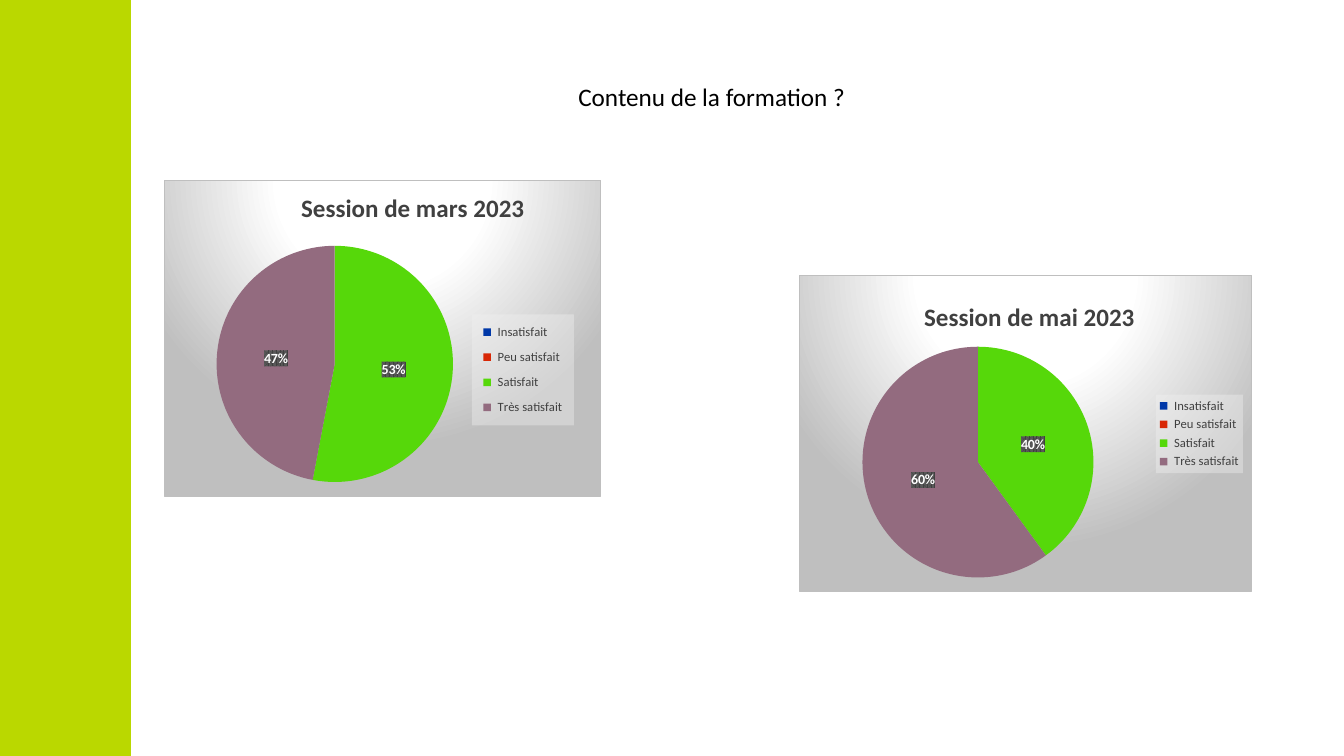
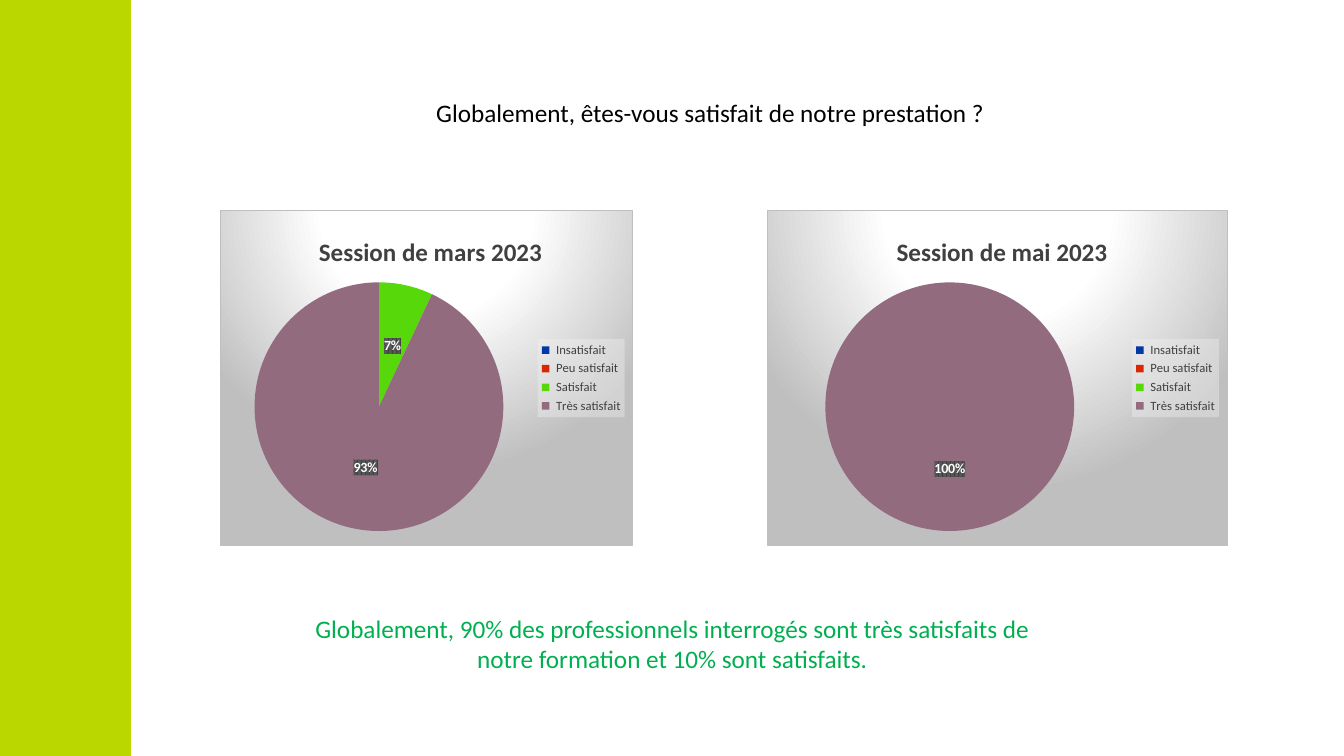
"""Build two survey slides, each comparing the pie charts of two training sessions."""
import dataclasses

import pptx
import pptx.chart.data
import pptx.dml.color
import pptx.enum.chart
import pptx.enum.shapes
import pptx.enum.text
import pptx.oxml
import pptx.oxml.ns
import pptx.util

Pt = pptx.util.Pt
RGB = pptx.dml.color.RGBColor.from_string
ALIGN = pptx.enum.text.PP_ALIGN
NS = pptx.oxml.ns.nsdecls("a", "c")
qn = pptx.oxml.ns.qn


@dataclasses.dataclass(frozen=True)
class Theme:
    """Colours, font and type sizes shared by the slides."""
    font: str = "Calibri"
    band: str = "BAD800"
    ink: str = "000000"
    white: str = "FFFFFF"
    grey: str = "404040"
    light_grey: str = "595959"
    edge: str = "BFBFBF"
    legend: str = "F2F2F2"
    conclusion: str = "00B050"
    slices: tuple = ("0038A8", "D82705", "56D80A", "936B7F")
    text_size: int = 18
    label_size: int = 10
    legend_size: int = 9


@dataclasses.dataclass(frozen=True)
class Pie:
    """One session's results; inner boxes are in points from the chart's corner."""
    title: str
    values: tuple
    box: tuple
    title_at: tuple
    circle: tuple
    legend_box: tuple = ()


T = Theme()
ANSWERS = (" Insatisfait", " Peu satisfait", " Satisfait", " Très satisfait")
MARCH, MAY = "Session de mars 2023", "Session de mai 2023"


def style_font(font, size, color, bold=False):
    """Apply the shared typeface with a size, colour and weight."""
    font.name, font.size, font.bold = T.font, Pt(size), bold
    font.color.rgb = RGB(color)


def add_band(s):
    """Draw the green band on the left edge."""
    sp = s.shapes.add_shape(pptx.enum.shapes.MSO_SHAPE.RECTANGLE, 0, 0, Pt(93.6), Pt(540))
    sp.shadow.inherit = False
    sp.fill.solid()
    sp.fill.fore_color.rgb = RGB(T.band)
    sp.line.fill.background()


def add_text(s, text, box, color=T.ink, align=ALIGN.LEFT):
    """Add a one-paragraph text box."""
    tf = s.shapes.add_textbox(*map(Pt, box)).text_frame
    tf.word_wrap = True
    p = tf.paragraphs[0]
    p.alignment = align
    r = p.add_run()
    r.text = text
    style_font(r.font, T.text_size, color)


def shape_props(inner):
    """Make a chart spPr element around fill and line XML."""
    return pptx.oxml.parse_xml(f"<c:spPr {NS}>{inner}</c:spPr>")


def solid(color, alpha=100):
    """Return solid fill XML with an opacity in percent."""
    return (f'<a:solidFill><a:srgbClr val="{color}"><a:alpha val="{alpha * 1000}"/>'
            "</a:srgbClr></a:solidFill>")


def set_layout(parent, pie, box, target=""):
    """Place a chart part at a box given in points from the chart's corner."""
    for old in parent.findall(qn("c:layout")):
        parent.remove(old)
    width, height = pie.box[2:]
    keys = ("x", "y", "w", "h")[:len(box)]
    parts = "".join(f'<c:{k}Mode val="edge"/>' for k in keys[:2])
    parts += "".join(f'<c:{k} val="{v / full:.4f}"/>'
                     for k, v, full in zip(keys, box, (width, height) * 2))
    layout = pptx.oxml.parse_xml(
        f"<c:layout {NS}><c:manualLayout>{target}{parts}</c:manualLayout></c:layout>")
    overlay = parent.find(qn("c:overlay"))
    (parent[0] if overlay is None else overlay).addprevious(layout)


def add_backdrop(chart):
    """Give the chart its radial grey background and thin border."""
    stops = "".join(f'<a:gs pos="{pos * 1000}"><a:srgbClr val="{color}"/></a:gs>'
                    for pos, color in ((0, T.white), (39, T.white), (100, T.edge)))
    frame = shape_props(
        f'<a:gradFill><a:gsLst>{stops}</a:gsLst><a:path path="circle">'
        '<a:fillToRect l="50000" t="-80000" r="50000" b="180000"/></a:path></a:gradFill>'
        f'<a:ln w="{Pt(0.75)}">{solid(T.edge)}</a:ln>')
    chart.element.find(qn("c:chart")).addnext(frame)


def add_title(chart, pie):
    """Write and place the chart title."""
    chart.has_title = True
    r = chart.chart_title.text_frame.paragraphs[0].add_run()
    r.text = pie.title
    style_font(r.font, T.text_size, T.grey, True)
    set_layout(chart.chart_title.element if hasattr(chart.chart_title, "element")
               else chart.element.find(".//" + qn("c:title")), pie, pie.title_at)


def add_legend(chart, pie):
    """Show the legend on a translucent panel at the right."""
    chart.has_legend = True
    legend = chart.legend
    legend.position = pptx.enum.chart.XL_LEGEND_POSITION.RIGHT
    legend.include_in_layout = False
    style_font(legend.font, T.legend_size, T.grey)
    el = chart.element.find(".//" + qn("c:legend"))
    el.find(qn("c:txPr")).addprevious(shape_props(solid(T.legend, 39)))
    if pie.legend_box:
        set_layout(el, pie, pie.legend_box)


def add_labels(series, values):
    """Label the slices with percentages, leaving out empty answers."""
    labels = series.data_labels
    labels.show_percentage, labels.show_value = True, False
    labels.number_format, labels.number_format_is_linked = "0%", False
    labels.position = pptx.enum.chart.XL_LABEL_POSITION.CENTER
    style_font(labels.font, T.label_size, T.white, True)
    el = series._element.find(qn("c:dLbls"))
    el.find(qn("c:txPr")).addprevious(shape_props(
        f'<a:pattFill prst="pct75"><a:fgClr><a:srgbClr val="{T.grey}"/></a:fgClr>'
        f'<a:bgClr><a:srgbClr val="{T.light_grey}"/></a:bgClr></a:pattFill>'))
    empty = [i for i, value in enumerate(values) if not value]
    for place, i in enumerate(empty):
        el.insert(place, pptx.oxml.parse_xml(
            f'<c:dLbl {NS}><c:idx val="{i}"/><c:delete val="1"/></c:dLbl>'))


def add_pie(s, pie):
    """Add a pie chart with its title, legend and labels."""
    data = pptx.chart.data.CategoryChartData()
    data.categories = ANSWERS
    data.add_series("Series 1", pie.values)
    chart = s.shapes.add_chart(
        pptx.enum.chart.XL_CHART_TYPE.PIE, *map(Pt, pie.box), data).chart
    style_font(chart.font, T.label_size, T.ink)
    add_backdrop(chart)
    add_title(chart, pie)
    add_legend(chart, pie)
    chart.plots[0].vary_by_categories = True
    series = chart.plots[0].series[0]
    for i, color in enumerate(T.slices):
        fill = series.points[i].format.fill
        fill.solid()
        fill.fore_color.rgb = RGB(color)
    add_labels(series, pie.values)
    left, top, size = pie.circle
    set_layout(chart.element.find(".//" + qn("c:plotArea")), pie,
               (left, top, size, size), '<c:layoutTarget val="inner"/>')


def add_question(prs, question, box, pies):
    """Add a slide with one question and the chart of each session."""
    s = prs.slides.add_slide(prs.slide_layouts[6])
    add_band(s)
    for pie in pies:
        add_pie(s, pie)
    add_text(s, question, box)
    return s


def main():
    """Build and save the presentation."""
    prs = pptx.Presentation()
    prs.slide_width, prs.slide_height = Pt(960), Pt(540)
    add_question(prs, "Contenu de la formation ?", (406, 54.7, 215.5, 29), (
        Pie(MARCH, (0, 0, 53, 47), (117.4, 128.5, 311.8, 226.5),
            (94.3, 3.6), (37, 46.9, 169.3), (219.8, 96, 73, 79.6)),
        Pie(MAY, (0, 0, 40, 60), (571, 196.6, 323, 226.5),
            (85.7, 14), (44.8, 50.9, 165.4))))
    s = add_question(prs, "Globalement, êtes-vous satisfait de notre prestation ?",
                     (304.5, 66.2, 414, 29), (
        Pie(MARCH, (0, 0, 7, 93), (157, 150, 295.5, 240),
            (67.3, 14), (24.5, 51.5, 178.2)),
        Pie(MAY, (0, 0, 0, 100), (548, 150, 329, 240),
            (89, 14), (41.3, 51.5, 178.2))))
    add_text(s, "Globalement, 90% des professionnels interrogés sont très satisfaits de "
             "notre formation et 10% sont satisfaits.",
             (208, 434.2, 544.5, 51), T.conclusion, ALIGN.CENTER)
    prs.save("out.pptx")


if __name__ == "__main__":
    main()
